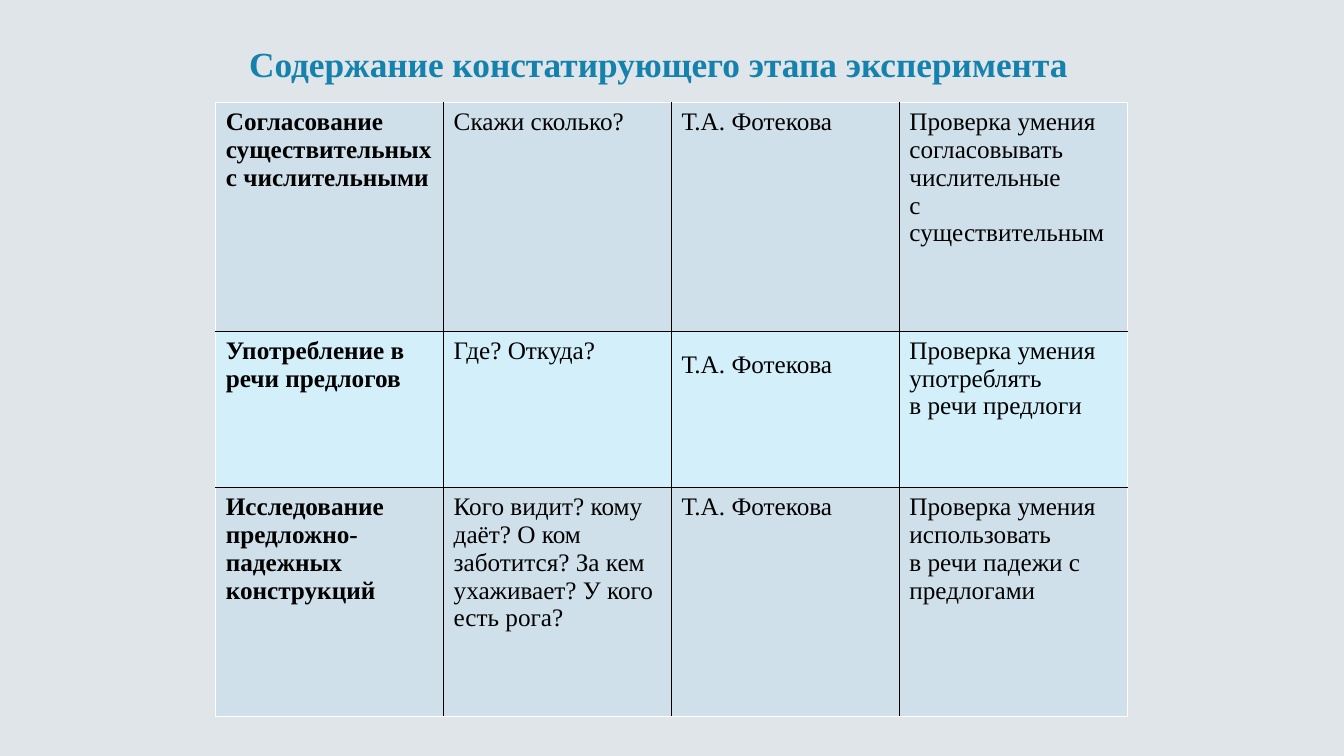
"""Build a slide with a table of the tasks in the first stage of a speech study."""
from lxml import etree
from pptx import Presentation
from pptx.dml.color import RGBColor
from pptx.enum.text import MSO_ANCHOR, PP_ALIGN
from pptx.oxml.ns import qn
from pptx.util import Inches, Pt

MIDDLE = MSO_ANCHOR.MIDDLE
JUSTIFY = PP_ALIGN.JUSTIFY
FONT = "Times New Roman"
COLORS = {
    "back": "DFE5E8",
    "title": "1482AC",
    "text": "000000",
    "odd": "CFE0EA",
    "even": "D2EFFA",
    "inner": "000000",
    "outer": "FFFFFF",
}
COL = 2.26
ROWS = [2.27, 1.55, 2.27]
LEFT, TOP = 2.14, 1.02
TASKS = [
    ["Согласование существительных с числительными", "Скажи сколько?", "Т.А. Фотекова",
     "Проверка умения согласовывать числительные \vс существительным"],
    ["Употребление в речи предлогов", "Где? Откуда?", "Т.А. Фотекова",
     "Проверка умения употреблять \vв речи предлоги"],
    ["Исследование предложно-падежных конструкций",
     "Кого видит? кому даёт? О ком заботится? За кем ухаживает? У кого есть рога?",
     "Т.А. Фотекова", "Проверка умения использовать\vв речи падежи с предлогами"],
]


def color(name):
    return RGBColor.from_string(COLORS[name])


def border(cell, sides):
    props = cell._tc.get_or_add_tcPr()
    for spot, (side, edge) in enumerate(sides.items()):
        line = etree.Element(qn(f"a:ln{side}"), w=str(Pt(1)))
        fill = etree.SubElement(line, qn("a:solidFill"))
        etree.SubElement(fill, qn("a:srgbClr"), val=COLORS["outer" if edge else "inner"])
        props.insert(spot, line)


deck = Presentation()
deck.slide_width, deck.slide_height = Inches(13.33), Inches(7.5)
slide = deck.slides.add_slide(deck.slide_layouts[5])
slide.background.fill.solid()
slide.background.fill.fore_color.rgb = color("back")

title = slide.shapes.title
title.left, title.top = Inches(2.37), Inches(0.3)
title.width, title.height = Inches(8.8), Inches(0.72)
title.text_frame.text = "Содержание констатирующего этапа эксперимента"
title.text_frame.vertical_anchor = MIDDLE
head = title.text_frame.paragraphs[0]
head.alignment = JUSTIFY
head.line_spacing = 0.9
head.font.name, head.font.size, head.font.bold = FONT, Pt(25.2), True
head.font.color.rgb = color("title")

count = len(TASKS[0])
table = slide.shapes.add_table(
    len(TASKS), count, Inches(LEFT), Inches(TOP),
    Inches(COL * count), Inches(sum(ROWS))).table
for column in table.columns:
    column.width = Inches(COL)

for r, task in enumerate(TASKS):
    table.rows[r].height = Inches(ROWS[r])
    for c, words in enumerate(task):
        cell = table.cell(r, c)
        cell.text = words
        cell.fill.solid()
        cell.fill.fore_color.rgb = color("even" if r % 2 else "odd")
        border(cell, {"L": c == 0, "R": c == count - 1,
                      "T": r == 0, "B": r == len(TASKS) - 1})
        para = cell.text_frame.paragraphs[0]
        para.font.name, para.font.size = FONT, Pt(18)
        para.font.bold = c == 0
        para.font.color.rgb = color("text")

table.cell(1, 2).text_frame.paragraphs[0].line_spacing = 1.5

deck.save("out.pptx")
